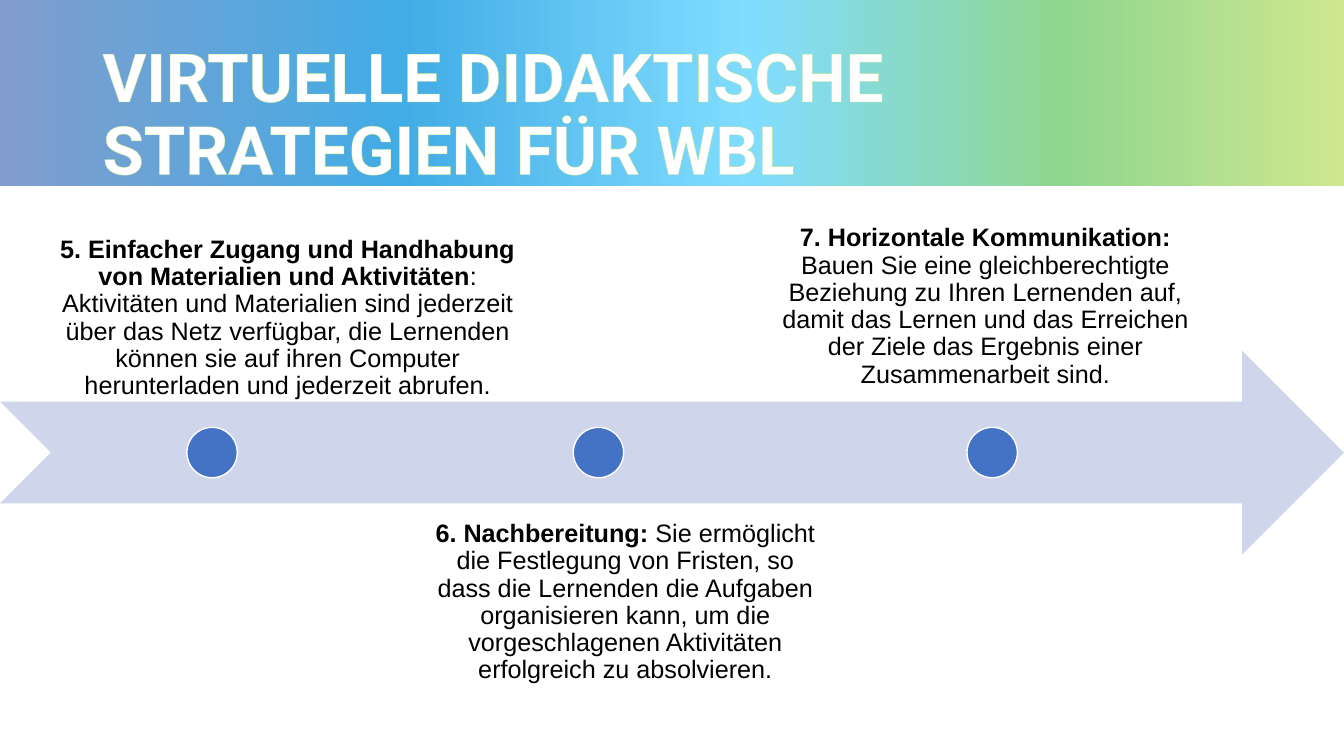
from typing import NamedTuple

from lxml.etree import SubElement
from pptx import Presentation
from pptx.dml.color import RGBColor
from pptx.enum.shapes import MSO_SHAPE
from pptx.enum.text import MSO_ANCHOR, MSO_AUTO_SIZE, PP_ALIGN
from pptx.oxml.ns import qn
from pptx.util import Emu, Pt

DOT = 48
DOT_TOP = 407
BOX_TALL = 194
INSET = 13
RAINBOW = [(0, "819DCD"), (30, "42ACE6"), (56, "81DDFF"),
           (79, "90D68F"), (100, "CFE78F")]


class Step(NamedTuple):
    left: int
    top: int
    width: int
    anchor: MSO_ANCHOR
    dot: int
    head: str
    body: str


STEPS = [
    Step(25, 200, 498, MSO_ANCHOR.BOTTOM, 178,
         "5. Einfacher Zugang und Handhabung von Materialien und Aktivitäten",
         ": Aktivitäten und Materialien sind jederzeit über das Netz verfügbar, "
         "die Lernenden können sie auf ihren Computer herunterladen und "
         "jederzeit abrufen."),
    Step(396, 483, 399, MSO_ANCHOR.TOP, 546,
         "6. Nachbereitung: ",
         "Sie ermöglicht die Festlegung von Fristen, so dass die Lernenden die "
         "Aufgaben organisieren kann, um die vorgeschlagenen Aktivitäten "
         "erfolgreich zu absolvieren."),
    Step(725, 189, 427, MSO_ANCHOR.BOTTOM, 921,
         "7. Horizontale Kommunikation: ",
         "Bauen Sie eine gleichberechtigte Beziehung zu Ihren Lernenden auf, "
         "damit das Lernen und das Erreichen der Ziele das Ergebnis einer "
         "Zusammenarbeit sind."),
]


def px(count: int) -> Emu:
    return Emu(count * 9525)


def color(code: str) -> RGBColor:
    return RGBColor.from_string(code)


def add_solid(slide, kind: MSO_SHAPE, box: tuple, fill: str, line: str = ""):
    """Add a flat shape, outlined only when a line colour is given."""
    shape = slide.shapes.add_shape(kind, *map(px, box))
    shape.shadow.inherit = False
    shape.fill.solid()
    shape.fill.fore_color.rgb = color(fill)
    if line:
        shape.line.color.rgb = color(line)
        shape.line.width = Pt(1)
    else:
        shape.line.fill.background()
    return shape


def add_band(slide) -> None:
    band = add_solid(slide, MSO_SHAPE.RECTANGLE, (0, 0, 1280, 177), "FFFFFF")
    band.fill.gradient()
    band.fill.gradient_angle = 0
    stops = band._element.spPr.find(qn("a:gradFill")).find(qn("a:gsLst"))
    for old in list(stops):
        stops.remove(old)
    for spot, code in RAINBOW:
        stop = SubElement(stops, qn("a:gs"), pos=str(spot * 1000))
        SubElement(stop, qn("a:srgbClr"), val=code)
    slide.shapes._spTree.insert(2, band._element)  # behind the title


def set_title(slide, text: str) -> None:
    title = slide.shapes.title
    title.left, title.top, title.width, title.height = map(
        px, (88, 31, 1104, 160))
    frame = title.text_frame
    frame.auto_size = MSO_AUTO_SIZE.NONE
    frame.word_wrap = True
    frame.vertical_anchor = MSO_ANCHOR.MIDDLE
    para = frame.paragraphs[0]
    para.alignment = PP_ALIGN.LEFT
    para.line_spacing = 0.9
    run = para.add_run()
    run.text = text
    edge = SubElement(run._r.get_or_add_rPr(), qn("a:ln"), w=str(Pt(0.75)))
    SubElement(SubElement(edge, qn("a:solidFill")), qn("a:srgbClr"),
               val="BFE38F")
    run.font.name = "Roboto"
    run.font.size = Pt(48)
    run.font.bold = True
    run.font.color.rgb = color("FFFFFF")


def add_step(slide, step: Step) -> None:
    box = slide.shapes.add_textbox(
        *map(px, (step.left, step.top, step.width, BOX_TALL)))
    frame = box.text_frame
    frame.word_wrap = True
    frame.vertical_anchor = step.anchor
    frame.margin_left = frame.margin_right = px(INSET)
    frame.margin_top = frame.margin_bottom = px(INSET)
    para = frame.paragraphs[0]
    para.alignment = PP_ALIGN.CENTER
    para.line_spacing = 0.9
    para.font.name = "Arial"
    para.font.size = Pt(18)
    para.font.color.rgb = color("000000")
    for text, bold in ((step.head, True), (step.body, False)):
        run = para.add_run()
        run.text = text
        run.font.bold = bold
    add_solid(slide, MSO_SHAPE.OVAL, (step.dot, DOT_TOP, DOT, DOT),
              "4472C4", "FFFFFF")


def main() -> None:
    deck = Presentation()
    deck.slide_width, deck.slide_height = px(1280), px(720)
    slide = deck.slides.add_slide(deck.slide_layouts[5])
    add_band(slide)
    set_title(slide, "VIRTUELLE DIDAKTISCHE STRATEGIEN FÜR WBL")
    add_solid(slide, MSO_SHAPE.NOTCHED_RIGHT_ARROW, (0, 334, 1280, 194),
              "CFD5EA")
    for step in STEPS:
        add_step(slide, step)
    deck.save("out.pptx")


if __name__ == "__main__":
    main()
